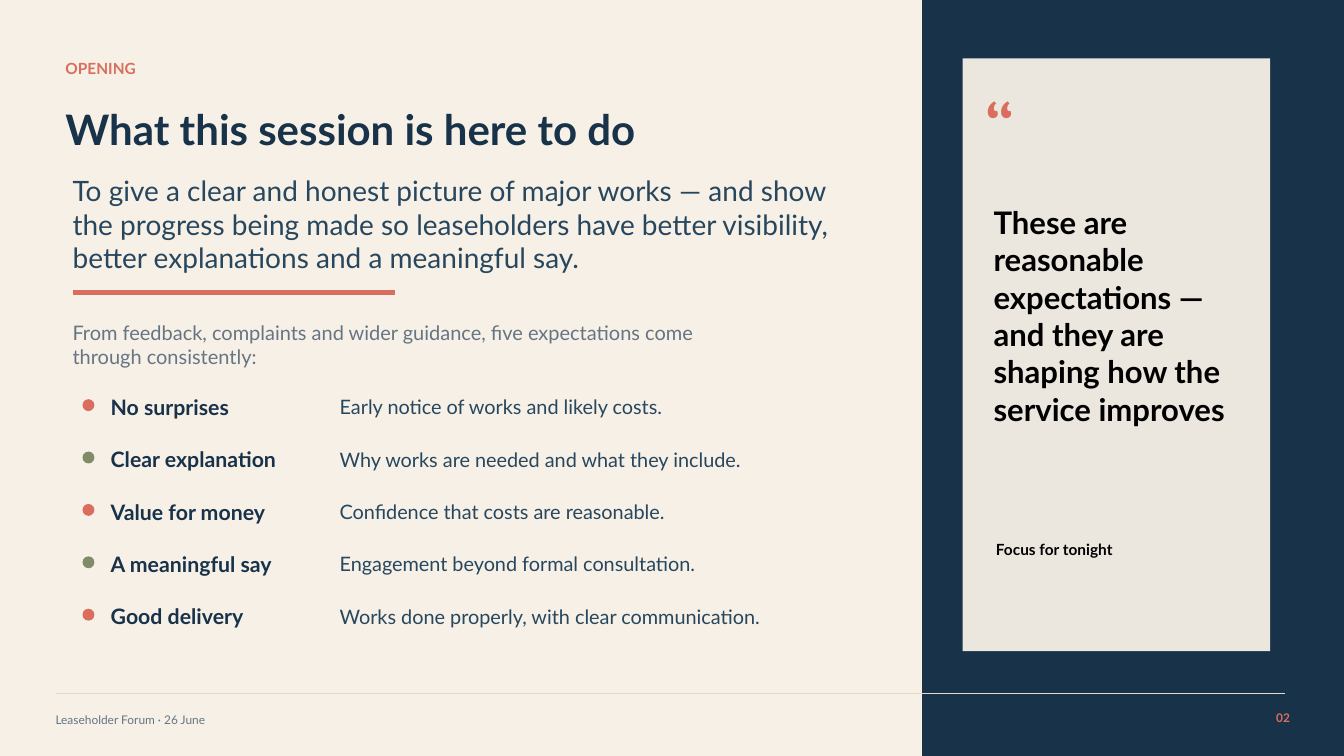
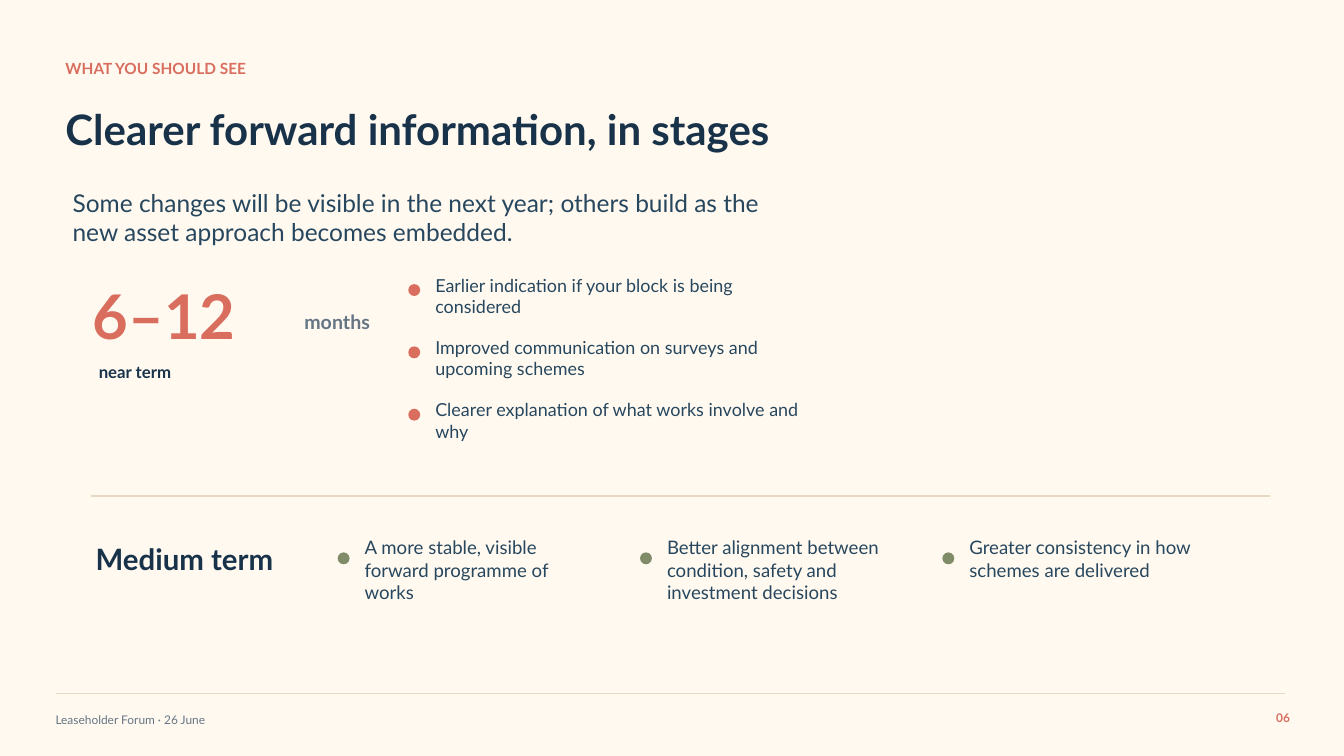
import lxml.etree
import pptx
import pptx.dml.color
import pptx.enum.shapes
import pptx.enum.text
import pptx.oxml.ns
import pptx.util

Cm = pptx.util.Cm
Pt = pptx.util.Pt
SHAPE = pptx.enum.shapes.MSO_SHAPE
ANCHOR = pptx.enum.text.MSO_ANCHOR
ALIGN = pptx.enum.text.PP_ALIGN
qn = pptx.oxml.ns.qn

NAVY = "18324A"
SLATE = "27475E"
GREY = "657584"
CORAL = "D96E5E"
SAGE = "808B67"
SAND = "E7D8C4"
CREAM = "F7F0E6"
IVORY = "FFF9F0"
BLACK = "000000"

WIDTH, HEIGHT = 33.87, 19.05
DOT = 0.3


def style(size, color, bold=False, name="Lato"):
    return {"size": Pt(size), "bold": bold, "name": name, "color": color}


EYEBROW = style(11, CORAL, True)
TITLE = style(30, NAVY, True)
FOOTER = style(8.5, GREY)
PAGE_NUMBER = style(8.5, CORAL, True)


def rgb(value):
    return pptx.dml.color.RGBColor.from_string(value)


def add_span(para, text, look):
    span = para.add_run()
    span.text = text
    for key, value in look.items():
        if key == "color":
            span.font.color.rgb = rgb(value)
        else:
            setattr(span.font, key, value)


def add_text(page, area, text, look, anchor=ANCHOR.TOP, align=ALIGN.LEFT):
    box = page.shapes.add_textbox(*map(Cm, area))
    frame = box.text_frame
    settings = {
        "word_wrap": True,
        "vertical_anchor": anchor,
        "margin_left": 0,
        "margin_top": 0,
        "margin_right": 0,
        "margin_bottom": 0,
    }
    for key, value in settings.items():
        setattr(frame, key, value)
    para = frame.paragraphs[0]
    para.alignment = align
    add_span(para, text, look)


def add_label(page, area, text, look, align=ALIGN.LEFT):
    add_text(page, area, text, look, ANCHOR.MIDDLE, align)


def add_filled(page, kind, area, color, opacity=100):
    shape = page.shapes.add_shape(kind, *map(Cm, area))
    shape.shadow.inherit = False
    shape.fill.solid()
    shape.fill.fore_color.rgb = rgb(color)
    shape.line.fill.background()
    if opacity < 100:
        fill_color = shape.fill._xPr.find(qn("a:solidFill"))[0]
        alpha = lxml.etree.SubElement(fill_color, qn("a:alpha"))
        alpha.set("val", str(opacity * 1000))


def add_dot(page, left, top, color):
    add_filled(page, SHAPE.OVAL, (left, top, DOT, DOT), color)


def add_rule(page, left, right, top, color, weight):
    rule = page.shapes.add_connector(
        pptx.enum.shapes.MSO_CONNECTOR.STRAIGHT,
        Cm(left), Cm(top), Cm(right), Cm(top))
    rule.line.color.rgb = rgb(color)
    rule.line.width = Pt(weight)
    lxml.etree.SubElement(rule._element.spPr, qn("a:effectLst"))


def add_bullet(page, area, text, look, color, drop):
    left, top = area[:2]
    add_dot(page, left - 0.68, top + drop, color)
    add_text(page, area, text, look)


def add_page(deck, background, eyebrow, title):
    page = deck.slides.add_slide(deck.slide_layouts[6])
    page.background.fill.solid()
    page.background.fill.fore_color.rgb = rgb(background)
    add_label(page, (1.65, 1.4, 13.97, 0.64), eyebrow, EYEBROW)
    add_label(page, (1.65, 2.31, 21.34, 1.88), title, TITLE)
    return page


def add_footer(page, number):
    add_label(page, (1.4, 17.91, 12.19, 0.46),
              "Leaseholder Forum · 26 June", FOOTER)
    add_label(page, (31.37, 17.86, 1.14, 0.46), number, PAGE_NUMBER,
              ALIGN.RIGHT)
    add_rule(page, 1.4, 32.39, 17.48, SAND, 1)


def add_expectations(page):
    expectations = [
        ("No surprises", "Early notice of works and likely costs."),
        ("Clear explanation", "Why works are needed and what they include."),
        ("Value for money", "Confidence that costs are reasonable."),
        ("A meaningful say", "Engagement beyond formal consultation."),
        ("Good delivery", "Works done properly, with clear communication."),
    ]
    for index, (name, meaning) in enumerate(expectations):
        top = 9.93 + 1.32 * index
        add_dot(page, 2.08, top + 0.13, (CORAL, SAGE)[index % 2])
        add_label(page, (2.79, top, 5.21, 0.64), name,
                  style(15.2, NAVY, True))
        add_label(page, (8.56, top, 12.83, 0.64), meaning,
                  style(14.2, SLATE))


def add_quote_panel(page):
    add_filled(page, SHAPE.RECTANGLE,
               (23.24, 0, WIDTH - 23.24, HEIGHT), NAVY)
    add_filled(page, SHAPE.RECTANGLE, (24.26, 1.47, 7.75, 14.94), CREAM, 95)
    add_label(page, (24.82, 1.98, 2.29, 2.29), "“",
              style(58, CORAL, name="Cambria"))
    add_text(
        page, (25.04, 5.13, 6.22, 5.64),
        "These are reasonable expectations — and they are shaping how the "
        "service improves", style(22.2, BLACK, True))
    add_label(page, (25.1, 13.52, 5.72, 0.64), "Focus for tonight",
              style(11, BLACK, True))


def build_opening(deck):
    page = add_page(deck, CREAM, "OPENING", "What this session is here to do")
    add_text(
        page, (1.83, 4.37, 19.3, 2.36),
        "To give a clear and honest picture of major works — and show the "
        "progress being made so leaseholders have better visibility, better "
        "explanations and a meaningful say.", style(20, SLATE))
    add_rule(page, 1.83, 9.96, 7.37, CORAL, 3)
    add_text(
        page, (1.83, 8.08, 17.3, 1.14),
        "From feedback, complaints and wider guidance, five expectations "
        "come through consistently:", style(14.3, GREY))
    add_expectations(page)
    add_quote_panel(page)
    add_footer(page, "02")


def add_near_term(page):
    add_label(page, (2.34, 6.99, 5.08, 1.91), "6–12", style(44, CORAL, True))
    add_label(page, (7.67, 7.79, 2.92, 0.64), "months", style(14, GREY, True))
    add_label(page, (2.49, 9.04, 6.1, 0.64), "near term",
              style(12, NAVY, True))
    changes = [
        "Earlier indication if your block is being considered",
        "Improved communication on surveys and upcoming schemes",
        "Clearer explanation of what works involve and why",
    ]
    for index, change in enumerate(changes):
        area = (10.97, 6.91 + 1.57 * index, 9.27, 0.91)
        add_bullet(page, area, change, style(12.8, SLATE), CORAL, 0.25)


def add_medium_term(page):
    add_label(page, (2.41, 13.59, 5.72, 0.97), "Medium term",
              style(21, NAVY, True))
    changes = [
        "A more stable, visible forward programme of works",
        "Better alignment between condition, safety and investment decisions",
        "Greater consistency in how schemes are delivered",
    ]
    for index, change in enumerate(changes):
        area = (9.19 + 7.62 * index, 13.51, 5.72, 1.42)
        add_bullet(page, area, change, style(13.3, SLATE), SAGE, 0.41)


def build_stages(deck):
    page = add_page(deck, IVORY, "WHAT YOU SHOULD SEE",
                    "Clearer forward information, in stages")
    add_text(
        page, (1.83, 4.73, 18.16, 1.4),
        "Some changes will be visible in the next year; others build as the "
        "new asset approach becomes embedded.", style(17.5, SLATE))
    add_near_term(page)
    add_rule(page, 2.29, 32, 12.5, SAND, 1.2)
    add_medium_term(page)
    add_footer(page, "06")


def main():
    deck = pptx.Presentation()
    deck.slide_width = Cm(WIDTH)
    deck.slide_height = Cm(HEIGHT)
    build_opening(deck)
    build_stages(deck)
    deck.save("out.pptx")


if __name__ == "__main__":
    main()
